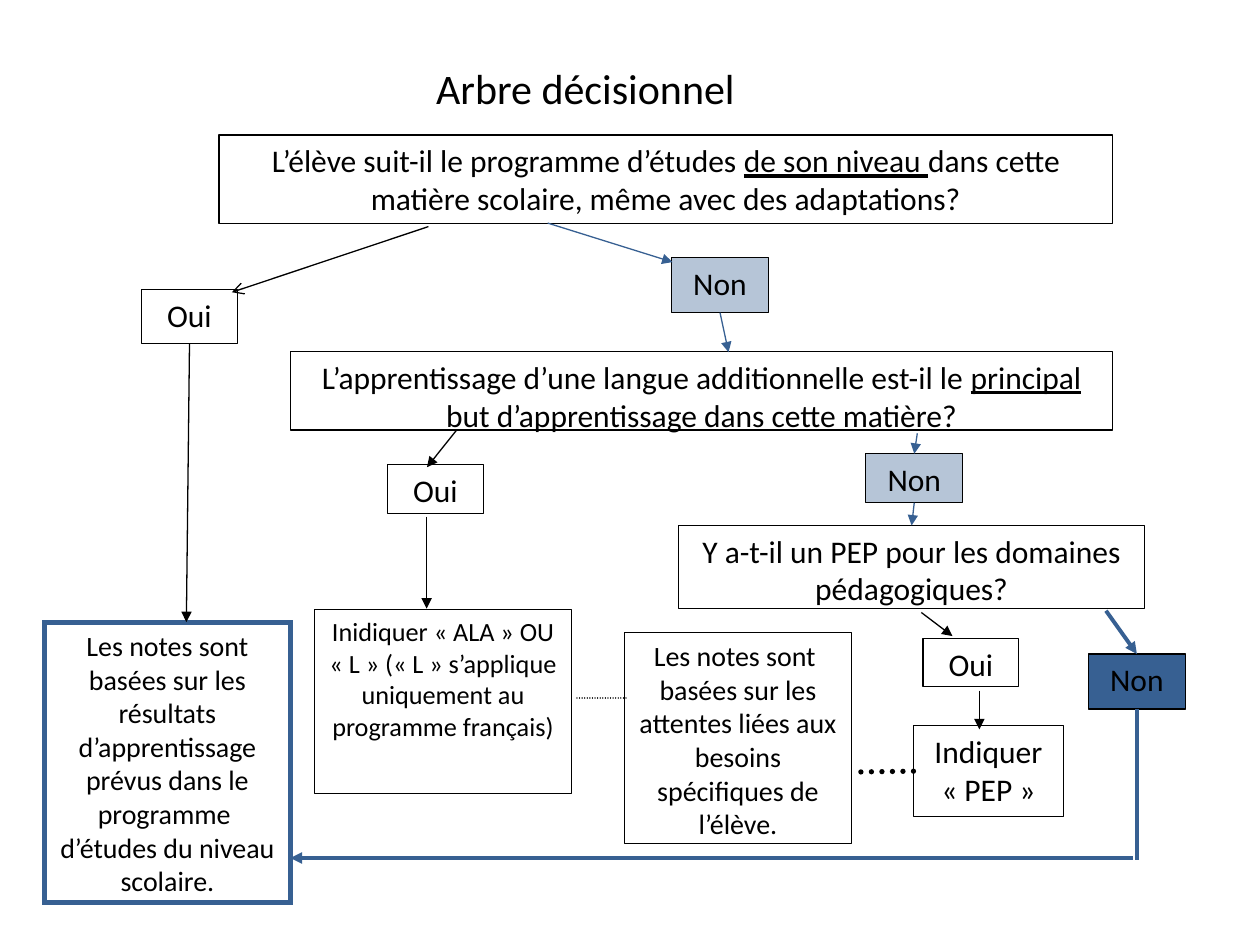
"""Build the decision tree slide on report card marks."""
from dataclasses import dataclass
from typing import Optional

from pptx import Presentation
from pptx.dml.color import RGBColor
from pptx.enum.dml import MSO_LINE
from pptx.enum.shapes import MSO_CONNECTOR, MSO_SHAPE
from pptx.enum.text import MSO_ANCHOR, PP_ALIGN
from pptx.oxml.ns import qn
from pptx.util import Pt
from lxml.etree import SubElement

BLACK = RGBColor(0x00, 0x00, 0x00)
WHITE = RGBColor(0xFF, 0xFF, 0xFF)
BLUE = RGBColor(0x37, 0x60, 0x92)
FONT = "Calibri"
TOP, LEFT, BOTTOM = 0, 1, 2


@dataclass
class Box:
    """A node; every second text segment is underlined."""
    key: str
    at: tuple[float, float, float, float]
    text: tuple[str, ...]
    size: float = 18
    fill: Optional[RGBColor] = WHITE
    alpha: Optional[int] = None
    line: RGBColor = BLACK
    weight: float = 0.75


@dataclass
class Link:
    """A line, with optional (box key, side) joins at its ends."""
    start: tuple[float, float]
    end: tuple[float, float]
    color: RGBColor = BLACK
    weight: float = 0.75
    head: Optional[str] = "triangle"
    cap: Optional[str] = None
    begin_at: Optional[tuple[str, int]] = None
    end_at: Optional[tuple[str, int]] = None


BOXES = [
    Box("level", (125.2, 77.2, 510.5, 50.5),
        ("L’élève suit-il le programme d’études ", "de son niveau ",
         "dans cette matière scolaire, même avec des adaptations?")),
    Box("level yes", (80.8, 165.5, 55, 31), ("Oui",), fill=None),
    Box("level no", (383.7, 147.2, 55.5, 31.5), ("Non",), fill=BLUE, alpha=36),
    Box("language", (166.2, 201, 469.5, 44.7),
        ("L’apprentissage d’une langue additionnelle est-il le ", "principal",
         " but d’apprentissage dans cette matière?")),
    Box("language yes", (221.3, 265.5, 55, 28), ("Oui",)),
    Box("language no", (494.7, 259.3, 55.5, 28), ("Non",), fill=BLUE, alpha=36),
    Box("plan", (387.8, 300.3, 266.3, 47.5),
        ("Y a-t-il un PEP pour les domaines pédagogiques?",)),
    Box("plan yes", (527.5, 365, 54.5, 27.3), ("Oui",), fill=None),
    Box("plan no", (622, 373.7, 55.3, 31.5), ("Non",), fill=BLUE),
    Box("mark ALA", (179.7, 348.3, 147, 105),
        ("Inidiquer « ALA » OU « L » (« L » s’applique uniquement au programme français)",),
        size=15),
    Box("mark PEP", (522, 414.7, 85.7, 52), ("Indiquer « PEP »",)),
    Box("level marks", (25.4, 355.7, 140.5, 160),
        ("Les notes sont basées sur les résultats d’apprentissage prévus dans le "
         "programme  d’études du niveau scolaire.",),
        size=16, fill=None, line=BLUE, weight=3),
    Box("needs marks", (357, 361.5, 129.5, 120.3),
        ("Les notes sont  basées sur les attentes liées aux besoins spécifiques de l’élève.",),
        size=16, weight=0.25),
]

LINKS = [
    Link((244.8, 129.5), (132.5, 167), head="arrow"),
    Link((313, 127.5), (384.3, 149.8), BLUE),
    Link((411.4, 178.7), (416.3, 201.3), BLUE, begin_at=("level no", BOTTOM)),
    Link((108.3, 196.5), (106.5, 355.5), begin_at=("level yes", BOTTOM)),
    Link((261, 245.7), (244, 267)),
    Link((524.2, 247.6), (522.4, 259.3), BLUE, end_at=("language no", TOP)),
    Link((522.4, 287.3), (521, 300.3), BLUE,
         begin_at=("language no", BOTTOM), end_at=("plan", TOP)),
    Link((243.8, 295.2), (243.8, 347.8)),
    Link((526.5, 350), (544.3, 363.5)),
    Link((632, 349), (649.6, 373.7), BLUE, 2.25, end_at=("plan no", TOP)),
    Link((559.7, 394.6), (559.7, 416.8)),
    Link((649.65, 405.2), (649.65, 491.7), BLUE, 2.25, None, begin_at=("plan no", BOTTOM)),
    Link((647.3, 490.3), (165.9, 490.3), BLUE, 2.25),
    Link((522, 440.7), (486.5, 441.2), BLACK, 3, None, "rnd", begin_at=("mark PEP", LEFT)),
    Link((329.7, 398.8), (358.5, 398.8), BLACK, 0.75, None, "rnd"),
]


def apply(target, formats: dict) -> None:
    """Set each named attribute on the target."""
    for name, value in formats.items():
        setattr(target, name, value)


def add_run(p, text: str, size: float, underline: bool = False) -> None:
    """Append a formatted run to a paragraph."""
    r = p.add_run()
    r.text = text
    apply(r.font, {"name": FONT, "size": Pt(size), "bold": False,
                   "underline": underline or None})
    r.font.color.rgb = BLACK


def add_title(s, text: str) -> None:
    """Place and fill the title placeholder."""
    sp = s.shapes.title
    apply(sp, {"left": Pt(242), "top": Pt(32), "width": Pt(245), "height": Pt(36.5)})
    tf = sp.text_frame
    apply(tf, {"word_wrap": True, "vertical_anchor": MSO_ANCHOR.TOP})
    p = tf.paragraphs[0]
    p.alignment = PP_ALIGN.LEFT
    add_run(p, text, 24)


def add_box(s, box: Box):
    """Draw a node and return its shape."""
    sp = s.shapes.add_shape(MSO_SHAPE.RECTANGLE, *map(Pt, box.at))
    sp.shadow.inherit = False
    if box.fill is None:
        sp.fill.background()
    else:
        sp.fill.solid()
        sp.fill.fore_color.rgb = box.fill
    if box.alpha is not None:
        color = sp._element.spPr.find(qn("a:solidFill")).find(qn("a:srgbClr"))
        SubElement(color, qn("a:alpha")).set("val", str(box.alpha * 1000))
    sp.line.color.rgb = box.line
    sp.line.width = Pt(box.weight)
    if box.line == BLUE:
        SubElement(sp._element.spPr.find(qn("a:ln")), qn("a:miter")).set("lim", "800000")
    tf = sp.text_frame
    apply(tf, {"word_wrap": True, "vertical_anchor": MSO_ANCHOR.TOP})
    p = tf.paragraphs[0]
    apply(p, {"alignment": PP_ALIGN.CENTER, "space_after": Pt(10)})
    for i, segment in enumerate(box.text):
        add_run(p, segment, box.size, i % 2 == 1)
    return sp


def add_link(s, link: Link, nodes: dict) -> None:
    """Draw a line and join it to its nodes."""
    cxn = s.shapes.add_connector(MSO_CONNECTOR.STRAIGHT, *map(Pt, link.start + link.end))
    for join, place in ((cxn.begin_connect, link.begin_at), (cxn.end_connect, link.end_at)):
        if place:
            key, side = place
            join(nodes[key], side)
    cxn.line.color.rgb = link.color
    cxn.line.width = Pt(link.weight)
    spPr = cxn._element.spPr
    ln = spPr.find(qn("a:ln"))
    if link.cap:
        cxn.line.dash_style = MSO_LINE.ROUND_DOT
        ln.set("cap", link.cap)
    if link.head:
        SubElement(ln, qn("a:tailEnd")).set("type", link.head)
    SubElement(spPr, qn("a:effectLst"))


def main() -> None:
    """Build and save the slide."""
    prs = Presentation()
    apply(prs, {"slide_width": Pt(720), "slide_height": Pt(540)})
    s = prs.slides.add_slide(prs.slide_layouts[5])
    add_title(s, "Arbre décisionnel")
    nodes = {box.key: add_box(s, box) for box in BOXES}
    for link in LINKS:
        add_link(s, link, nodes)
    prs.save("out.pptx")


if __name__ == "__main__":
    main()
